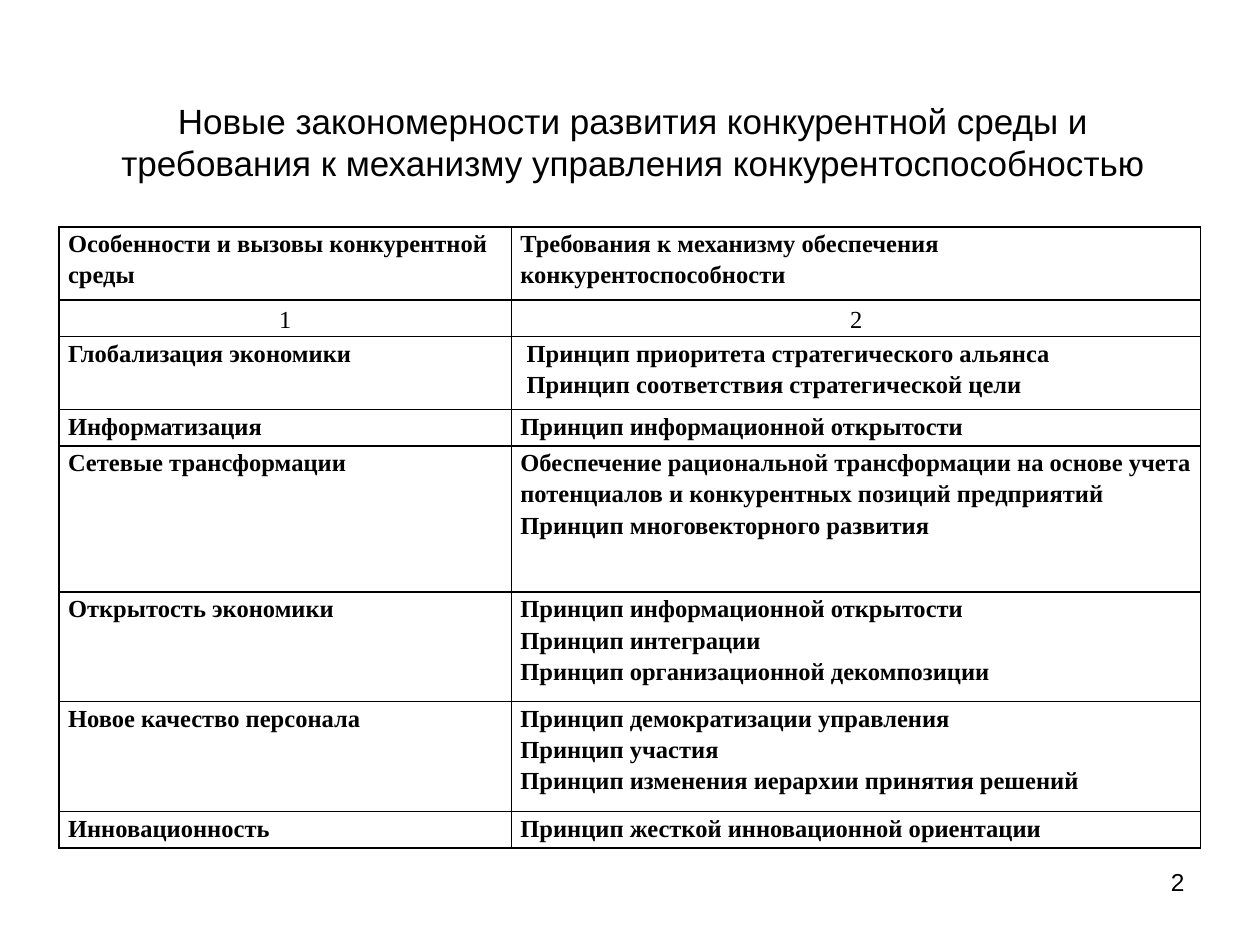
import pptx
import pptx.util
import pptx.dml.color
import pptx.enum.text
import pptx.oxml.ns
from lxml import etree

Inches, Pt = pptx.util.Inches, pptx.util.Pt
ALIGN = pptx.enum.text.PP_ALIGN
ANCHOR = pptx.enum.text.MSO_ANCHOR
BLACK = "000000"


def style(paragraph, font_name, size, align, bold=False):
    paragraph.alignment = align
    paragraph.font.name = font_name
    paragraph.font.size = Pt(size)
    paragraph.font.bold = bold
    paragraph.font.color.rgb = pptx.dml.color.RGBColor.from_string(BLACK)


def add_borders(cell, color, width):
    properties = cell._tc.get_or_add_tcPr()
    for side in ("lnL", "lnR", "lnT", "lnB"):
        line = etree.SubElement(properties, pptx.oxml.ns.qn(f"a:{side}"), w=str(Pt(width)))
        fill = etree.SubElement(line, pptx.oxml.ns.qn("a:solidFill"))
        etree.SubElement(fill, pptx.oxml.ns.qn("a:srgbClr"), val=color)


deck = pptx.Presentation()
deck.slide_width, deck.slide_height = Inches(10), Inches(7.5)
slide = deck.slides.add_slide(deck.slide_layouts[5])

# Title
title = slide.shapes.title
title.left, title.top = Inches(0.55), Inches(0.55)
title.width, title.height = Inches(8.95), Inches(1.15)
heading = title.text_frame
heading.text = ("Новые закономерности развития конкурентной среды и "
                "требования к механизму управления конкурентоспособностью")
heading.vertical_anchor = ANCHOR.MIDDLE
heading.margin_left = heading.margin_right = Inches(0.25)
style(heading.paragraphs[0], "Arial", 20, ALIGN.CENTER)

# Table: height in units, challenge, requirements
requirements = [
    (2, "Особенности и вызовы конкурентной среды",
     "Требования к механизму обеспечения конкурентоспособности"),
    (1, "1", "2"),
    (2, "Глобализация экономики",
     "Принцип приоритета стратегического альянса\n"
     "Принцип соответствия стратегической цели"),
    (1, "Информатизация", "Принцип информационной открытости"),
    (4, "Сетевые трансформации",
     "Обеспечение рациональной трансформации на основе учета потенциалов "
     "и конкурентных позиций предприятий\n"
     "Принцип многовекторного развития"),
    (3, "Открытость экономики",
     "Принцип информационной открытости\n"
     "Принцип интеграции\n"
     "Принцип организационной декомпозиции"),
    (3, "Новое качество персонала",
     "Принцип демократизации управления\n"
     "Принцип участия\n"
     "Принцип изменения иерархии принятия решений"),
    (1, "Инновационность", "Принцип жесткой инновационной ориентации"),
]
NUMBER_ROW, INDENTED_CELL = 1, (2, 1)
table = slide.shapes.add_table(len(requirements), 2, Inches(0.47), Inches(1.8),
                               Inches(9.06), Inches(4.93)).table
table.first_row = table.horz_banding = False
table.columns[0].width, table.columns[1].width = Inches(3.59), Inches(5.47)

for row, (units, *texts) in enumerate(requirements):
    table.rows[row].height = Inches(0.29 * units)
    numbered = row == NUMBER_ROW
    for column, text in enumerate(texts):
        cell = table.cell(row, column)
        add_borders(cell, BLACK, 1)
        cell.fill.background()
        cell.margin_left = Inches(0.12 if (row, column) == INDENTED_CELL else 0.07)
        cell.margin_right = Inches(0.07)
        cell.margin_top = cell.margin_bottom = 0
        cell.vertical_anchor = ANCHOR.MIDDLE if numbered else ANCHOR.TOP
        cell.text = text
        for paragraph in cell.text_frame.paragraphs:
            paragraph.line_spacing = 1.15
            style(paragraph, "Times New Roman", 14,
                  ALIGN.CENTER if numbered else ALIGN.LEFT, not numbered)

# Page number
page_number = slide.shapes.add_textbox(Inches(7.17), Inches(6.83),
                                       Inches(2.33), Inches(0.52)).text_frame
page_number.word_wrap = True
page_number.text = "2"
style(page_number.paragraphs[0], "Arial", 14, ALIGN.RIGHT)

deck.save("out.pptx")
